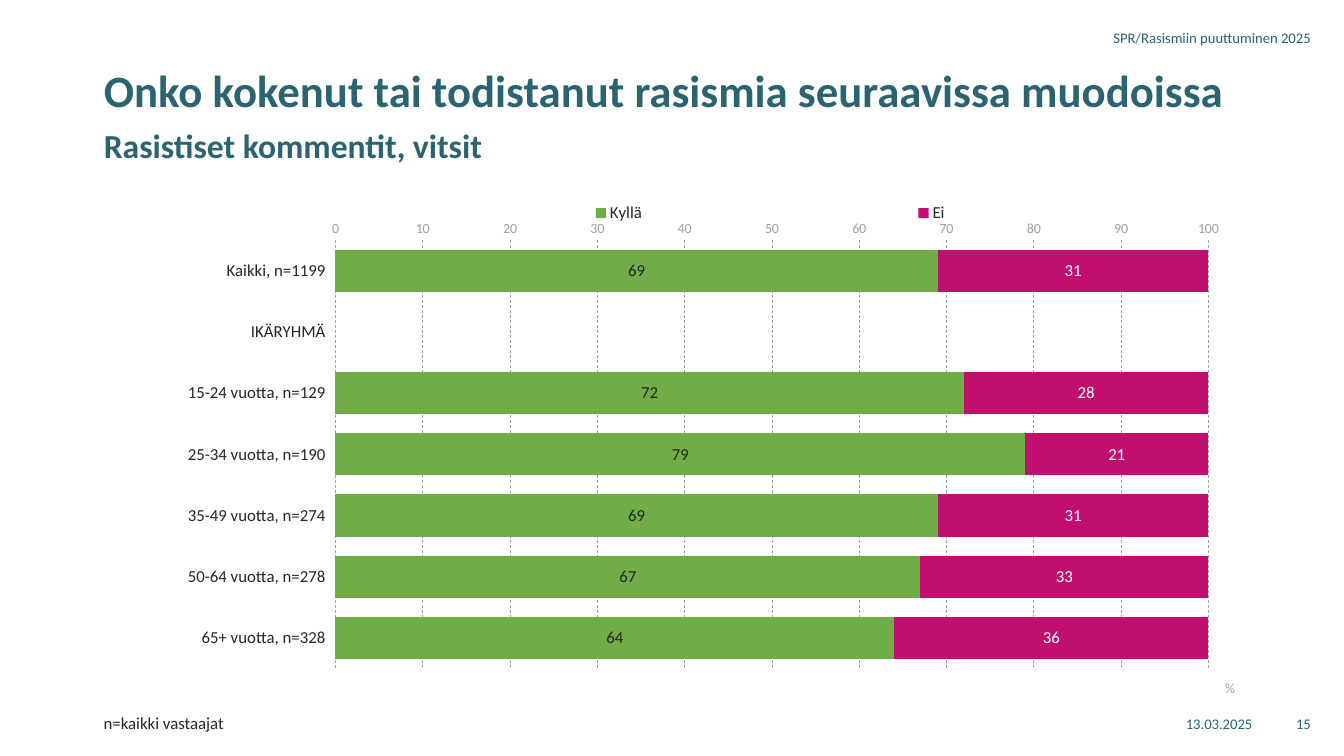
import pptx
import pptx.chart.data
import pptx.dml.color
import pptx.enum.chart
import pptx.enum.dml
import pptx.enum.text
import pptx.oxml
import pptx.oxml.ns
import pptx.util
from pptx.util import Inches

FONT = "Calibri"
COLORS = {"teal": "2A6471", "ink": "262626", "gray": "A0A0A0",
          "green": "70AD47", "magenta": "C10F70", "white": "FFFFFF"}
ANSWERS = {
    "Kaikki, n=1199": (69, 31),
    "IKÄRYHMÄ": (None, None),
    "15-24 vuotta, n=129": (72, 28),
    "25-34 vuotta, n=190": (79, 21),
    "35-49 vuotta, n=274": (69, 31),
    "50-64 vuotta, n=278": (67, 33),
    "65+ vuotta, n=328": (64, 36),
}
SERIES = (("Kyllä", "green", "ink"), ("Ei", "magenta", "white"))


def rgb(name):
    """Return the named colour."""
    return pptx.dml.color.RGBColor.from_string(COLORS[name])


def style_font(font, size, color, bold=False):
    """Set typeface, size, colour and weight."""
    font.name = FONT
    font.size = pptx.util.Pt(size)
    font.bold = bold
    font.color.rgb = rgb(color)


def add_run(paragraph, text, size=12, color="ink", bold=False):
    """Add a formatted run to a paragraph."""
    run = paragraph.add_run()
    run.text = text
    style_font(run.font, size, color, bold)


def add_text(slide, box, text, align="LEFT", anchor="MIDDLE", spacing=None, **font):
    """Add a one-paragraph text box."""
    frame = slide.shapes.add_textbox(*map(Inches, box)).text_frame
    frame.word_wrap = True
    frame.vertical_anchor = getattr(pptx.enum.text.MSO_ANCHOR, anchor)
    paragraph = frame.paragraphs[0]
    paragraph.alignment = getattr(pptx.enum.text.PP_ALIGN, align)
    paragraph.line_spacing = spacing
    add_run(paragraph, text, **font)


def add_title(slide, box, heading, subheading):
    """Place the two-line heading in the title placeholder."""
    title = slide.shapes.title
    title.left, title.top, title.width, title.height = map(Inches, box)
    frame = title.text_frame
    frame.auto_size = pptx.enum.text.MSO_AUTO_SIZE.NONE
    frame.vertical_anchor = pptx.enum.text.MSO_ANCHOR.TOP
    paragraph = frame.paragraphs[0]
    paragraph.alignment = pptx.enum.text.PP_ALIGN.LEFT
    paragraph.line_spacing = pptx.util.Pt(35)
    add_run(paragraph, heading, size=32, color="teal", bold=True)
    paragraph.add_line_break()
    add_run(paragraph, subheading, size=24, color="teal", bold=True)


def set_layout(element, index, inner=False, **fractions):
    """Fix the place of a chart part as fractions of the chart."""
    for old in element.findall(pptx.oxml.ns.qn("c:layout")):
        element.remove(old)
    target = '<c:layoutTarget val="inner"/>' if inner else ""
    modes = "".join(f'<c:{key}Mode val="edge"/>' for key in ("x", "y"))
    values = "".join(f'<c:{key} val="{value}"/>' for key, value in fractions.items())
    element.insert(index, pptx.oxml.parse_xml(
        f'<c:layout {pptx.oxml.ns.nsdecls("c")}><c:manualLayout>'
        f'{target}{modes}{values}</c:manualLayout></c:layout>'))


def format_axes(chart):
    """Format the category and percent axes."""
    enums = pptx.enum.chart
    category, percent = chart.category_axis, chart.value_axis
    for axis, size, color in ((category, 12, "ink"), (percent, 10, "gray")):
        axis.major_tick_mark = axis.minor_tick_mark = enums.XL_TICK_MARK.NONE
        axis.format.line.fill.background()
        style_font(axis.tick_labels.font, size, color)
    category.reverse_order = True
    category.has_major_gridlines = False
    category.tick_label_position = enums.XL_TICK_LABEL_POSITION.LOW
    category.crosses = enums.XL_AXIS_CROSSES.MAXIMUM
    percent.minimum_scale, percent.maximum_scale = 0, 100.01
    percent.major_unit = 10
    percent.tick_labels.number_format = "General"
    percent.tick_labels.number_format_is_linked = False
    percent.has_major_gridlines = True
    grid = percent.major_gridlines.format.line
    grid.color.rgb = rgb("gray")
    grid.width = pptx.util.Pt(0.5)
    grid.dash_style = pptx.enum.dml.MSO_LINE.DASH
    percent.has_title = True
    title = percent.axis_title
    add_run(title.text_frame.paragraphs[0], "%", size=10, color="gray")
    set_layout(title._element, 1, x=0.976, y=0.95)


def add_answer_chart(slide, box):
    """Add the stacked bars of answers by age group."""
    enums = pptx.enum.chart
    data = pptx.chart.data.CategoryChartData()
    data.categories = list(ANSWERS)
    for (name, _, _), values in zip(SERIES, zip(*ANSWERS.values())):
        data.add_series(name, values)
    chart = slide.shapes.add_chart(
        enums.XL_CHART_TYPE.BAR_STACKED, *map(Inches, box), data).chart
    chart.has_title = False
    style_font(chart.font, 12, "ink")
    format_axes(chart)
    plot = chart.plots[0]
    plot.gap_width, plot.overlap = 45, 100
    plot.vary_by_categories = False
    for series, (_, fill, label) in zip(plot.series, SERIES):
        series.format.fill.solid()
        series.format.fill.fore_color.rgb = rgb(fill)
        labels = series.data_labels
        labels.show_value = True
        labels.position = enums.XL_LABEL_POSITION.CENTER
        labels.number_format = "#,##0"
        labels.number_format_is_linked = False
        style_font(labels.font, 12, label)
    chart.has_legend = True
    chart.legend.position = enums.XL_LEGEND_POSITION.TOP
    chart.legend.include_in_layout = False
    style_font(chart.legend.font, 12, "ink")
    set_layout(chart.legend._element, 1, x=0.2, y=0.04, w=0.77, h=0.07)
    plot_area = chart._chartSpace.chart.plotArea
    set_layout(plot_area, 0, inner=True, x=0.209, y=0.126, w=0.755, h=0.808)


def add_page_marks(slide, right, header_top, footer_top):
    """Add survey name, date and page number against the right edge."""
    marks = (("SPR/Rasismiin puuttuminen 2025", right, header_top, 4.5),
             ("13.03.2025", right - 0.58, footer_top, 3),
             ("15", right, footer_top, 0.44))
    for text, edge, top, width in marks:
        add_text(slide, (edge - width, top, width, 0.4), text,
                 align="RIGHT", size=10.5, color="teal")


def main():
    """Build and save the slide."""
    presentation = pptx.Presentation()
    presentation.slide_width = Inches(13.33)
    presentation.slide_height = Inches(7.5)
    slide = presentation.slides.add_slide(presentation.slide_layouts[5])
    left, width = 0.93, 11.47
    add_answer_chart(slide, (left, 1.72, width, 5.26))
    add_page_marks(slide, 13.1, 0.17, 6.98)
    add_title(slide, (left, 0.62, width, 1.05),
              "Onko kokenut tai todistanut rasismia seuraavissa muodoissa",
              "Rasistiset kommentit, vitsit")
    add_text(slide, (left, 7.04, 9.18, 0.28), "n=kaikki vastaajat",
             anchor="TOP", spacing=0.9)
    presentation.save("out.pptx")


if __name__ == "__main__":
    main()
